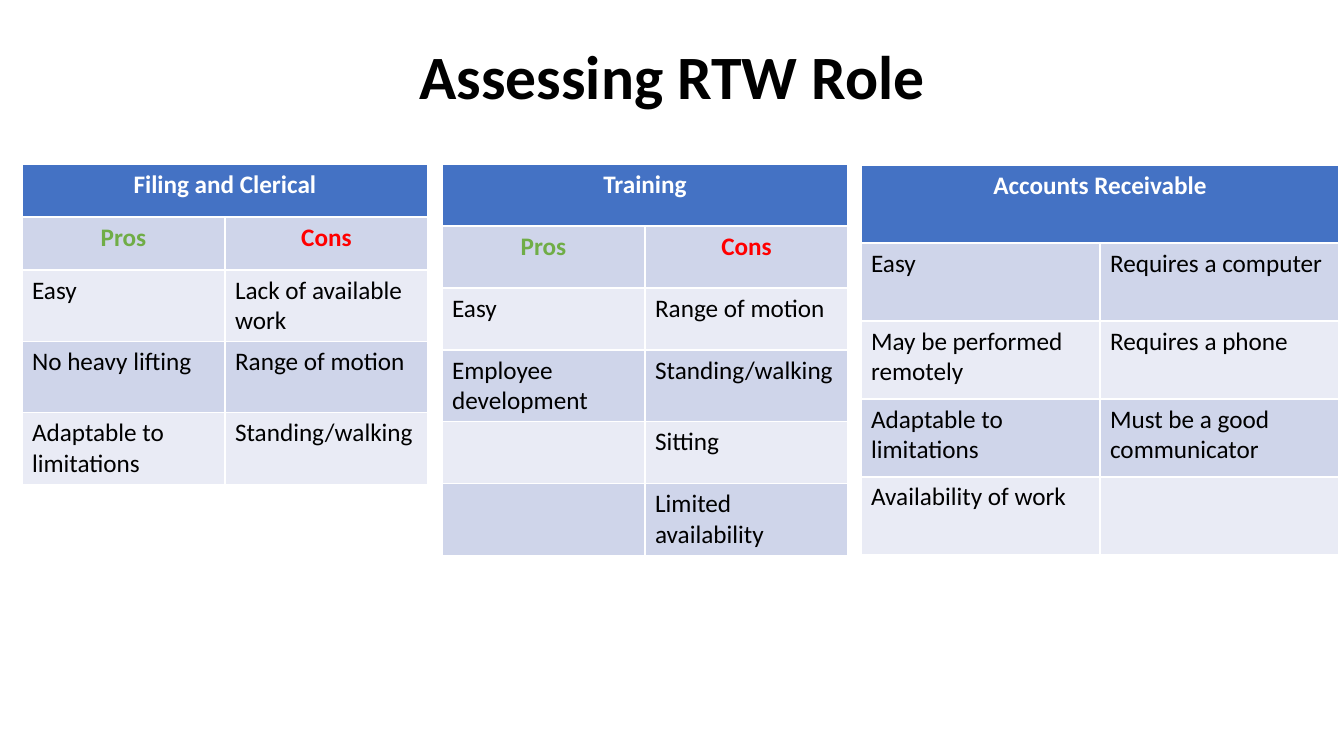
from dataclasses import dataclass

from pptx import Presentation
from pptx import util as u
from pptx.dml.color import RGBColor
from pptx.enum import text

# Content
HEADING = "Assessing RTW Role"
HEADING_BOX = (93, 7, 1159, 146)
PROS_CONS = ("Pros", "Cons")
ROLES = [
    dict(name="Filing and Clerical", at=(22, 164), column=203, heights=[53, 53, 71, 71, 71],
         rows=[PROS_CONS,
               ("Easy", "Lack of available work"),
               ("No heavy lifting", "Range of motion"),
               ("Adaptable to limitations", "Standing/walking")]),
    dict(name="Training", at=(442, 164), column=203, heights=[62] * 6,
         rows=[PROS_CONS,
               ("Easy", "Range of motion"),
               ("Employee development", "Standing/walking"),
               ("", "Sitting"),
               ("", "Limited availability")]),
    dict(name="Accounts Receivable", at=(861, 165), column=239, heights=[78] * 5,
         rows=[("Easy", "Requires a computer"),
               ("May be performed remotely", "Requires a phone"),
               ("Adaptable to limitations", "Must be a good communicator"),
               ("Availability of work", "")]),
]


@dataclass(frozen=True)
class Theme:
    font: str = "Calibri"
    heading_size: int = 44
    body_size: int = 18
    ink: str = "000000"
    header_ink: str = "FFFFFF"
    header_fill: str = "4472C4"
    pros: str = "70AD47"
    cons: str = "FF0000"
    bands: tuple = ("CFD5EA", "E9EBF5")


THEME = Theme()
LABEL_INKS = dict(zip(PROS_CONS, (THEME.pros, THEME.cons)))


def px(length):
    return u.Emu(round(length * 914400 / 100.8))


def write(paragraph, words, ink, size=THEME.body_size, bold=False, centred=False):
    paragraph.alignment = text.PP_ALIGN.CENTER if centred else text.PP_ALIGN.LEFT
    run = paragraph.add_run()
    run.text = words
    for name, value in dict(name=THEME.font, size=u.Pt(size), bold=bold).items():
        setattr(run.font, name, value)
    run.font.color.rgb = RGBColor.from_string(ink)


def paint(cell, colour):
    cell.fill.solid()
    cell.fill.fore_color.rgb = RGBColor.from_string(colour)


def add_role(slide, role):
    left, top = role["at"]
    heights = role["heights"]
    grid = slide.shapes.add_table(len(heights), 2, px(left), px(top),
                                  px(2 * role["column"]), px(sum(heights))).table
    for column in grid.columns:
        column.width = px(role["column"])
    for row, height in zip(grid.rows, heights):
        row.height = px(height)

    # Role name across both columns
    header = grid.cell(0, 0)
    header.merge(grid.cell(0, 1))
    paint(header, THEME.header_fill)
    write(header.text_frame.paragraphs[0], role["name"], THEME.header_ink,
          bold=True, centred=True)

    # Banded pros and cons
    for r, entries in enumerate(role["rows"], start=1):
        for c, entry in enumerate(entries):
            cell = grid.cell(r, c)
            paint(cell, THEME.bands[(r - 1) % 2])
            if entry:
                is_label = entry in LABEL_INKS
                write(cell.text_frame.paragraphs[0], entry,
                      LABEL_INKS.get(entry, THEME.ink), bold=is_label, centred=is_label)


def main():
    deck = Presentation()
    deck.slide_width, deck.slide_height = px(1344), px(756)
    slide = deck.slides.add_slide(deck.slide_layouts[5])

    # Heading
    heading = slide.shapes.title
    for side, length in zip(("left", "top", "width", "height"), HEADING_BOX):
        setattr(heading, side, px(length))
    frame = heading.text_frame
    frame.auto_size = text.MSO_AUTO_SIZE.NONE
    frame.vertical_anchor = text.MSO_ANCHOR.MIDDLE
    frame.paragraphs[0].line_spacing = 0.9
    write(frame.paragraphs[0], HEADING, THEME.ink, THEME.heading_size, bold=True, centred=True)

    # Role tables
    for role in ROLES:
        add_role(slide, role)

    deck.save("out.pptx")


if __name__ == "__main__":
    main()
